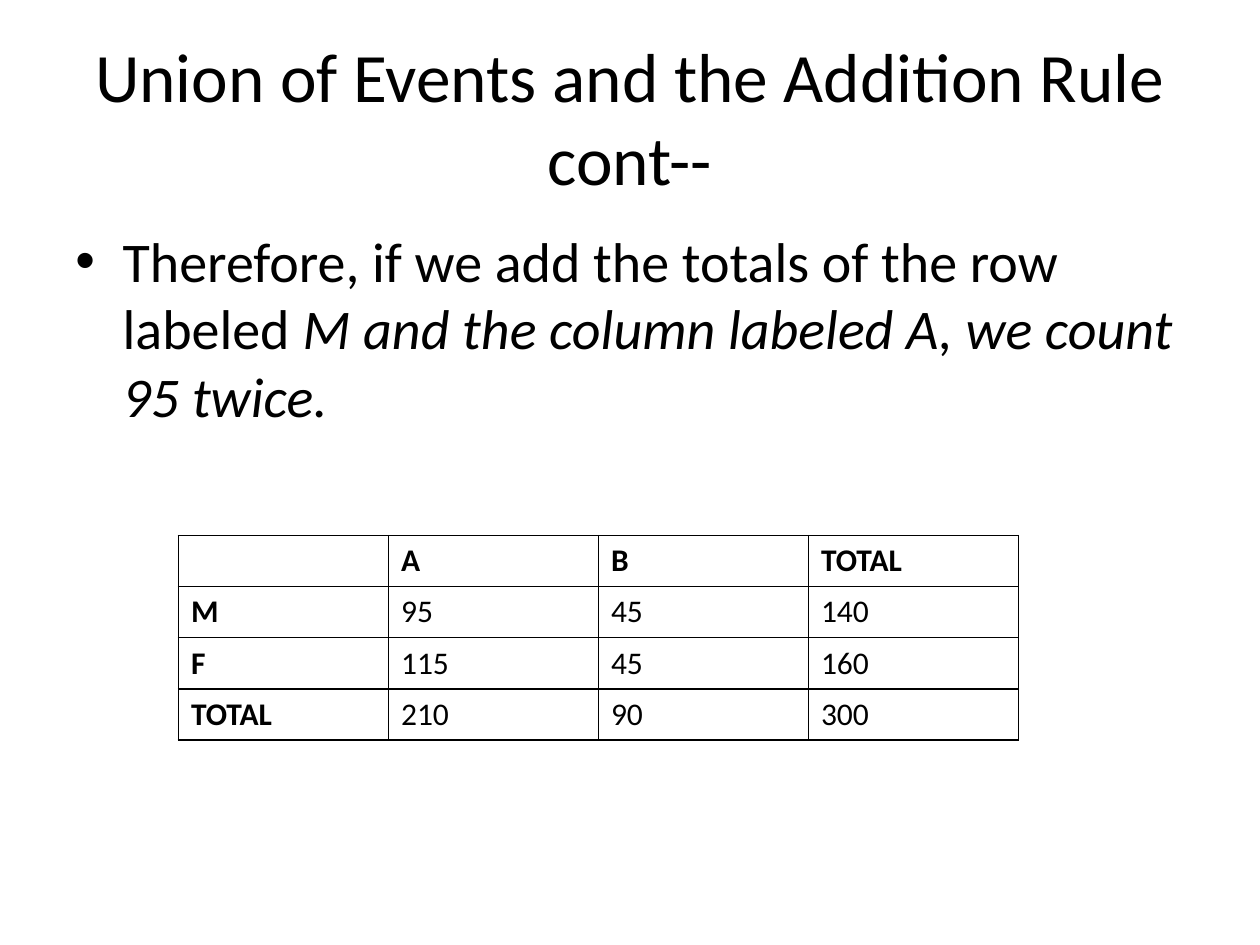
from lxml import etree
from pptx import Presentation, util as u
from pptx.dml.color import RGBColor
from pptx.enum import text
from pptx.oxml.ns import qn

BLACK = RGBColor(0, 0, 0)
WHITE = RGBColor(255, 255, 255)
FONT = "Calibri"

TITLE = "Union of Events and the Addition Rule cont--"
STATEMENT = [
    ("Therefore, if we add the totals of the row labeled ", False),
    ("M and the column labeled A, we count 95 twice.", True),
]
COUNTS = [
    ["", "A", "B", "TOTAL"],
    ["M", "95", "45", "140"],
    ["F", "115", "45", "160"],
    ["TOTAL", "210", "90", "300"],
]
COLUMN_WIDTH, ROW_HEIGHT = 120, 29.2


def write(paragraph, words, size, bold=False, italic=False):
    run = paragraph.add_run()
    run.text = words
    font = run.font
    font.name, font.size = FONT, u.Pt(size)
    font.bold, font.italic = bold, italic
    font.color.rgb = BLACK


def add_frame(slide, left, top, width, height, anchor):
    box = slide.shapes.add_textbox(*map(u.Pt, (left, top, width, height)))
    frame = box.text_frame
    frame.word_wrap = True
    frame.vertical_anchor = anchor
    return frame


def add_bullet(paragraph, indent):
    properties = paragraph._p.get_or_add_pPr()
    properties.set("marL", str(u.Pt(indent)))
    properties.set("indent", str(-u.Pt(indent)))
    etree.SubElement(properties, qn("a:buFont"), typeface="Arial")
    etree.SubElement(properties, qn("a:buChar"), char="•")


def add_borders(cell, width=1):
    properties = cell._tc.get_or_add_tcPr()
    for position, side in enumerate(("lnL", "lnR", "lnT", "lnB")):
        line = etree.Element(qn(f"a:{side}"), w=str(u.Pt(width)))
        fill = etree.SubElement(line, qn("a:solidFill"))
        etree.SubElement(fill, qn("a:srgbClr"), val=str(BLACK))
        properties.insert(position, line)


deck = Presentation()
deck.slide_width, deck.slide_height = u.Pt(720), u.Pt(540)
slide = deck.slides.add_slide(deck.slide_layouts[6])

title = add_frame(slide, 36, 21.6, 648, 90, text.MSO_ANCHOR.MIDDLE).paragraphs[0]
title.alignment = text.PP_ALIGN.CENTER
write(title, TITLE, 39.6)

statement = add_frame(slide, 36, 126, 648, 356.4, text.MSO_ANCHOR.TOP).paragraphs[0]
statement.space_before = u.Pt(6.4)
add_bullet(statement, 27)
for words, italic in STATEMENT:
    write(statement, words, 32, italic=italic)

rows, columns = len(COUNTS), len(COUNTS[0])
table = slide.shapes.add_table(
    rows, columns, u.Pt(102), u.Pt(306),
    u.Pt(columns * COLUMN_WIDTH), u.Pt(rows * ROW_HEIGHT),
).table
for column in table.columns:
    column.width = u.Pt(COLUMN_WIDTH)
for r, values in enumerate(COUNTS):
    table.rows[r].height = u.Pt(ROW_HEIGHT)
    for c, value in enumerate(values):
        cell = table.cell(r, c)
        cell.fill.solid()
        cell.fill.fore_color.rgb = WHITE
        add_borders(cell)
        if value:
            write(cell.text_frame.paragraphs[0], value, 18, bold=r == 0 or c == 0)

deck.save("out.pptx")
